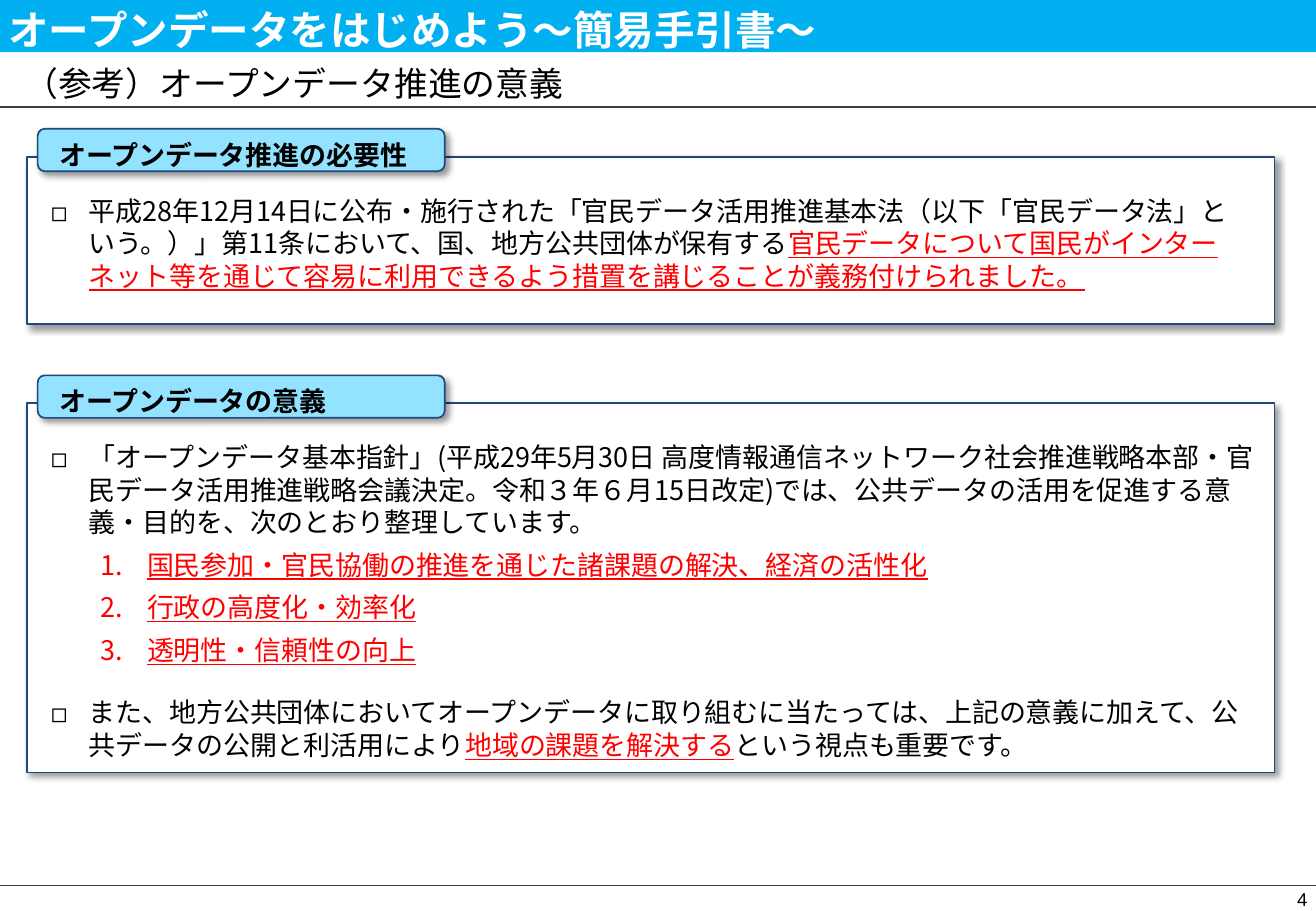
from lxml import etree
from pptx import Presentation
from pptx.dml.color import RGBColor
from pptx.enum import shapes, text
from pptx.oxml import ns
from pptx.util import Inches, Pt

COLORS = {"banner": "00B0F0", "tab": "93E2FF", "edge": "1F497D", "rule": "404040",
          "white": "FFFFFF", "black": "000000", "red": "FF0000"}
FONT = "Noto Sans CJK JP"
WIDTH, HEIGHT = 10.83, 7.5
RULES = [0.88, 7.29]
BANNER = "オープンデータをはじめよう〜簡易手引書〜"
TITLE = "（参考）オープンデータ推進の意義"
PAGE = "4"

# Paragraph: (level, space before, space after, [(text, emphasised)])
SECTIONS = [
    {"heading": "オープンデータ推進の必要性", "top": 1.06, "height": 1.38, "body": [
        ("square", 0, 12, [
            ("平成28年12月14日に公布・施行された「官民データ活用推進基本法（以下「官民データ法」"
             "という。）」第11条において、国、地方公共団体が保有する", False),
            ("官民データについて国民がインターネット等を通じて容易に利用できるよう"
             "措置を講じることが義務付けられました。", True)]),
    ]},
    {"heading": "オープンデータの意義", "top": 3.09, "height": 3.04, "body": [
        ("square", 0, 6, [
            ("「オープンデータ基本指針」(平成29年5月30日 高度情報通信ネットワーク社会推進戦略本部・"
             "官民データ活用推進戦略会議決定。令和３年６月15日改定)では、公共データの活用を"
             "促進する意義・目的を、次のとおり整理しています。", False)]),
        ("number", 0, 6, [("国民参加・官民協働の推進を通じた諸課題の解決、経済の活性化", True)]),
        ("number", 0, 6, [("行政の高度化・効率化", True)]),
        ("number", 0, 6, [("透明性・信頼性の向上", True)]),
        ("square", 12, 3, [
            ("また、地方公共団体においてオープンデータに取り組むに当たっては、上記の意義に加えて、"
             "公共データの公開と利活用により", False),
            ("地域の課題を解決する", True),
            ("という視点も重要です。", False)]),
    ]},
]
LEVELS = {  # left margin, hanging indent, bullet element, its attributes
    "square": (0.31, 0.31, "a:buChar", {"char": "◻"}),
    "number": (0.79, 0.38, "a:buAutoNum", {"type": "arabicPeriod"}),
}


def rgb(name):
    return RGBColor.from_string(COLORS[name])


def sub(parent, tag, **attrs):
    return etree.SubElement(parent, ns.qn(tag), {k: str(v) for k, v in attrs.items()})


def add_text(p, content, size=16, color="black", bold=False, underline=False, font=FONT):
    r = p.add_run()
    r.text = content
    f = r.font
    f.size, f.bold, f.underline, f.name = Pt(size), bold, underline, font
    f.color.rgb = rgb(color)
    sub(r._r.get_or_add_rPr(), "a:ea", typeface=font)


def set_frame(s, anchor, insets=(0, 0, 0, 0), wrap=True):
    tf = s.text_frame
    tf.auto_size = text.MSO_AUTO_SIZE.NONE
    tf.word_wrap, tf.vertical_anchor = wrap, anchor
    tf.margin_left, tf.margin_top, tf.margin_right, tf.margin_bottom = map(Inches, insets)
    p = tf.paragraphs[0]
    p.alignment = text.PP_ALIGN.LEFT
    return p


def set_bullet(p, level):
    margin, hang, tag, attrs = LEVELS[level]
    pPr = p._p.get_or_add_pPr()
    pPr.set("marL", str(Inches(margin)))
    pPr.set("indent", str(-Inches(hang)))
    sub(pPr, "a:buFont", typeface=FONT)
    sub(pPr, tag, **attrs)


def add_panel(s_tree, kind, box, fill, edge=None):
    """Filled shape; with an edge colour it also casts a soft shadow."""
    s = s_tree.add_shape(kind, *map(Inches, box))
    s.shadow.inherit = False
    s.fill.solid()
    s.fill.fore_color.rgb = rgb(fill)
    if edge is None:
        s.line.fill.background()
        return s
    s.line.color.rgb, s.line.width = rgb(edge), Pt(1)
    effects = s._element.spPr.find(ns.qn("a:effectLst"))
    shadow = sub(effects, "a:outerShdw", blurRad=Pt(4), dist=Pt(3), dir=45 * 60000,
                 algn="tl", rotWithShape=0)
    sub(sub(shadow, "a:srgbClr", val=COLORS["black"]), "a:alpha", val=40000)
    return s


def add_section(s_tree, section):
    top = section["top"]
    box = add_panel(s_tree, shapes.MSO_SHAPE.RECTANGLE,
                    (0.22, top + 0.23, 10.27, section["height"]), "white", "edge")
    p = set_frame(box, text.MSO_ANCHOR.TOP, (0.2, 0.31, 0.16, 0.05))
    for i, (level, before, after, runs) in enumerate(section["body"]):
        if i:
            p = box.text_frame.add_paragraph()
            p.alignment = text.PP_ALIGN.LEFT
        p.space_before, p.space_after = Pt(before), Pt(after)
        set_bullet(p, level)
        for content, strong in runs:
            add_text(p, content, color="red" if strong else "black", underline=strong)

    tab = add_panel(s_tree, shapes.MSO_SHAPE.ROUNDED_RECTANGLE,
                    (0.31, top, 3.35, 0.35), "tab", "edge")
    p = set_frame(tab, text.MSO_ANCHOR.MIDDLE, (0.16, 0.12, 0.1, 0.05), wrap=False)
    add_text(p, section["heading"], bold=True)


def main():
    prs = Presentation()
    prs.slide_width, prs.slide_height = Inches(WIDTH), Inches(HEIGHT)
    slide = prs.slides.add_slide(prs.slide_layouts[5])
    s_tree = slide.shapes

    add_panel(s_tree, shapes.MSO_SHAPE.RECTANGLE, (0, 0, WIDTH, 0.43), "banner")
    for y in RULES:
        rule = s_tree.add_connector(shapes.MSO_CONNECTOR.STRAIGHT, 0, Inches(y),
                                    Inches(WIDTH), Inches(y))
        rule.line.color.rgb, rule.line.width = rgb("rule"), Pt(1)
        sub(rule._element.spPr, "a:effectLst")

    title = s_tree.title
    title.left, title.top, title.width, title.height = map(Inches, (0.2, 0.44, 9.99, 0.48))
    add_text(set_frame(title, text.MSO_ANCHOR.MIDDLE), TITLE, size=20)

    banner = s_tree.add_textbox(*map(Inches, (0.07, 0.03, 6.95, 0.43)))
    add_text(set_frame(banner, text.MSO_ANCHOR.MIDDLE), BANNER, size=24, color="white", bold=True)

    page = s_tree.add_textbox(*map(Inches, (10.39, 7.25, 0.44, 0.28)))
    p = set_frame(page, text.MSO_ANCHOR.BOTTOM, (0.07, 0.04, 0.07, 0.04))
    p.alignment = text.PP_ALIGN.RIGHT
    add_text(p, PAGE, size=11, font="Arial")

    for section in SECTIONS:
        add_section(s_tree, section)
    prs.save("out.pptx")


if __name__ == "__main__":
    main()
